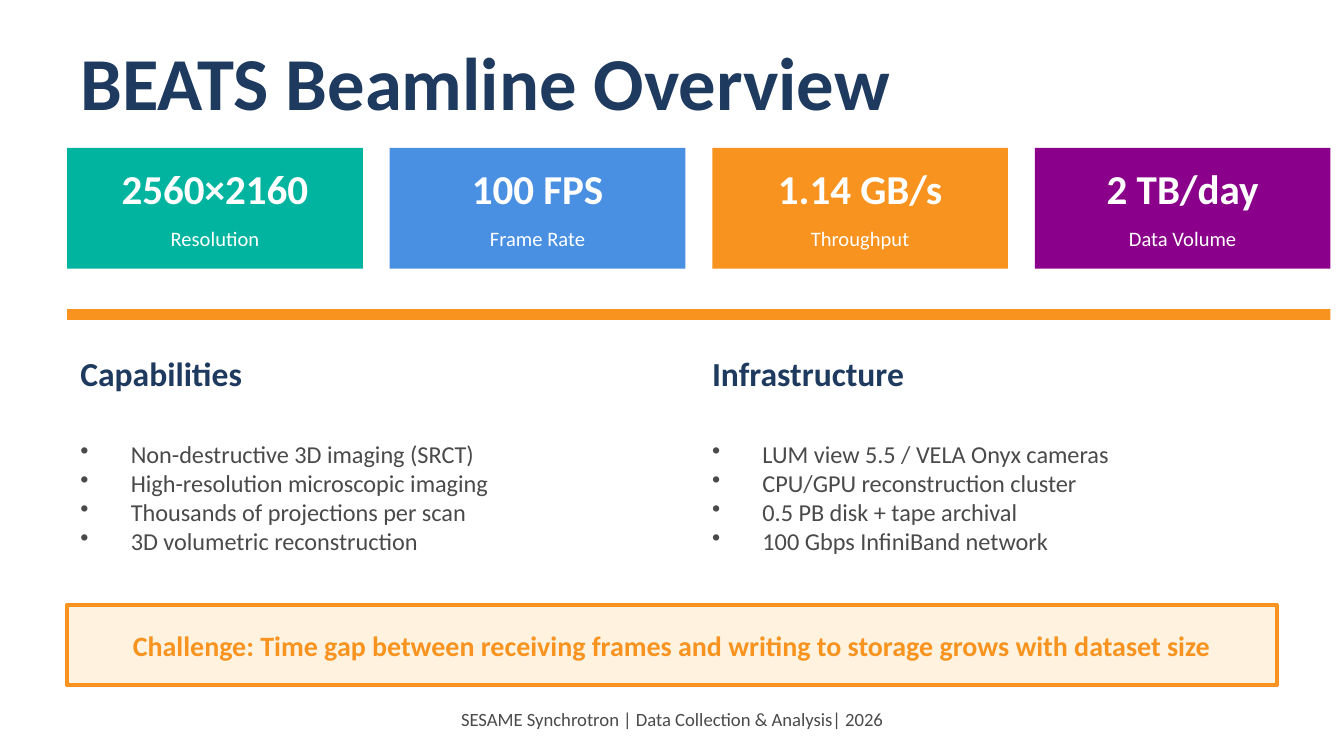
import pptx
import pptx.dml.color
import pptx.enum.shapes
import pptx.enum.text
import pptx.oxml.ns
import pptx.util
from lxml import etree

NAVY = "1E3A5F"
ORANGE = "F7931E"
GRAY = "4A4A4A"
WHITE = "FFFFFF"
CREAM = "FFF3E0"
LEFT = pptx.enum.text.PP_ALIGN.LEFT
CENTER = pptx.enum.text.PP_ALIGN.CENTER


def color(value):
    return pptx.dml.color.RGBColor.from_string(value)


def points(*lengths):
    return [pptx.util.Pt(length) for length in lengths]


class SlideBuilder:
    font_name = "Calibri"
    bullet_indent = 27

    def __init__(self, deck):
        self.page = deck.slides.add_slide(deck.slide_layouts[5])

    def fill_text(self, box, lines, size, tint, bold=False, align=LEFT, bullets=False):
        frame = box.text_frame
        frame.word_wrap = True
        frame.auto_size = pptx.enum.text.MSO_AUTO_SIZE.NONE
        frame.vertical_anchor = pptx.enum.text.MSO_ANCHOR.MIDDLE
        frame.text = "\n".join(lines)
        for para in frame.paragraphs:
            para.alignment = align
            if bullets:
                self.add_bullet(para)
            for span in para.runs:
                span.font.name = self.font_name
                span.font.size = pptx.util.Pt(size)
                span.font.bold = bold
                span.font.color.rgb = color(tint)

    def add_bullet(self, para):
        properties = para._p.get_or_add_pPr()
        indent = pptx.util.Pt(self.bullet_indent)
        properties.set("marL", str(indent))
        properties.set("indent", str(-indent))
        bullet = etree.SubElement(properties, pptx.oxml.ns.qn("a:buChar"))
        bullet.set("char", "•")

    def title(self, text, left, top, width, height, size, tint):
        box = self.page.shapes.title
        box.left, box.top, box.width, box.height = points(left, top, width, height)
        self.fill_text(box, [text], size, tint, bold=True)

    def text(self, lines, left, top, width, height, size, tint, **style):
        box = self.page.shapes.add_textbox(*points(left, top, width, height))
        self.fill_text(box, lines, size, tint, **style)

    def rectangle(self, left, top, width, height, fill, line=None):
        shape = self.page.shapes.add_shape(
            pptx.enum.shapes.MSO_SHAPE.RECTANGLE, *points(left, top, width, height))
        shape.shadow.inherit = False
        shape.fill.solid()
        shape.fill.fore_color.rgb = color(fill)
        if line:
            shape.line.color.rgb = color(line)
            shape.line.width = pptx.util.Pt(2)
        else:
            shape.line.fill.background()

    def metric_card(self, left, value, label, fill):
        width = 158.4
        self.rectangle(left, 79.2, width, 64.8, fill)
        self.text([value], left, 86.4, width, 28.8, 22, WHITE, bold=True, align=CENTER)
        self.text([label], left, 118.8, width, 18, 11, WHITE, align=CENTER)

    def bullet_column(self, left, width, heading, items):
        self.text([heading], left, 187.2, width, 25.2, 18, NAVY, bold=True)
        self.text(items, left, 216, width, 100.8, 13, GRAY, bullets=True)


def main():
    deck = pptx.Presentation()
    deck.slide_width, deck.slide_height = points(720, 405)
    slide = SlideBuilder(deck)

    slide.title("BEATS Beamline Overview", 36, 21.6, 648, 43.2, 40, NAVY)

    metrics = [
        ("2560×2160", "Resolution", "00B4A0"),
        ("100 FPS", "Frame Rate", "4A90E2"),
        ("1.14 GB/s", "Throughput", ORANGE),
        ("2 TB/day", "Data Volume", "8B008B"),
    ]
    for index, (value, label, fill) in enumerate(metrics):
        slide.metric_card(36 + index * 172.8, value, label, fill)

    slide.rectangle(36, 165.6, 676.8, 5.76, ORANGE)

    slide.bullet_column(36, 324, "Capabilities", [
        "Non-destructive 3D imaging (SRCT)",
        "High-resolution microscopic imaging",
        "Thousands of projections per scan",
        "3D volumetric reconstruction",
    ])
    slide.bullet_column(374.4, 309.6, "Infrastructure", [
        "LUM view 5.5 / VELA Onyx cameras",
        "CPU/GPU reconstruction cluster",
        "0.5 PB disk + tape archival",
        "100 Gbps InfiniBand network",
    ])

    slide.rectangle(36, 324, 648, 43.2, CREAM, line=ORANGE)
    slide.text(
        ["Challenge: Time gap between receiving frames and writing to storage grows with dataset size"],
        50.4, 324, 619.2, 43.2, 15, ORANGE, bold=True, align=CENTER)
    slide.text(["SESAME Synchrotron | Data Collection & Analysis| 2026"],
               36, 374.4, 648, 21.6, 10, GRAY, align=CENTER)

    deck.save("out.pptx")


if __name__ == "__main__":
    main()
